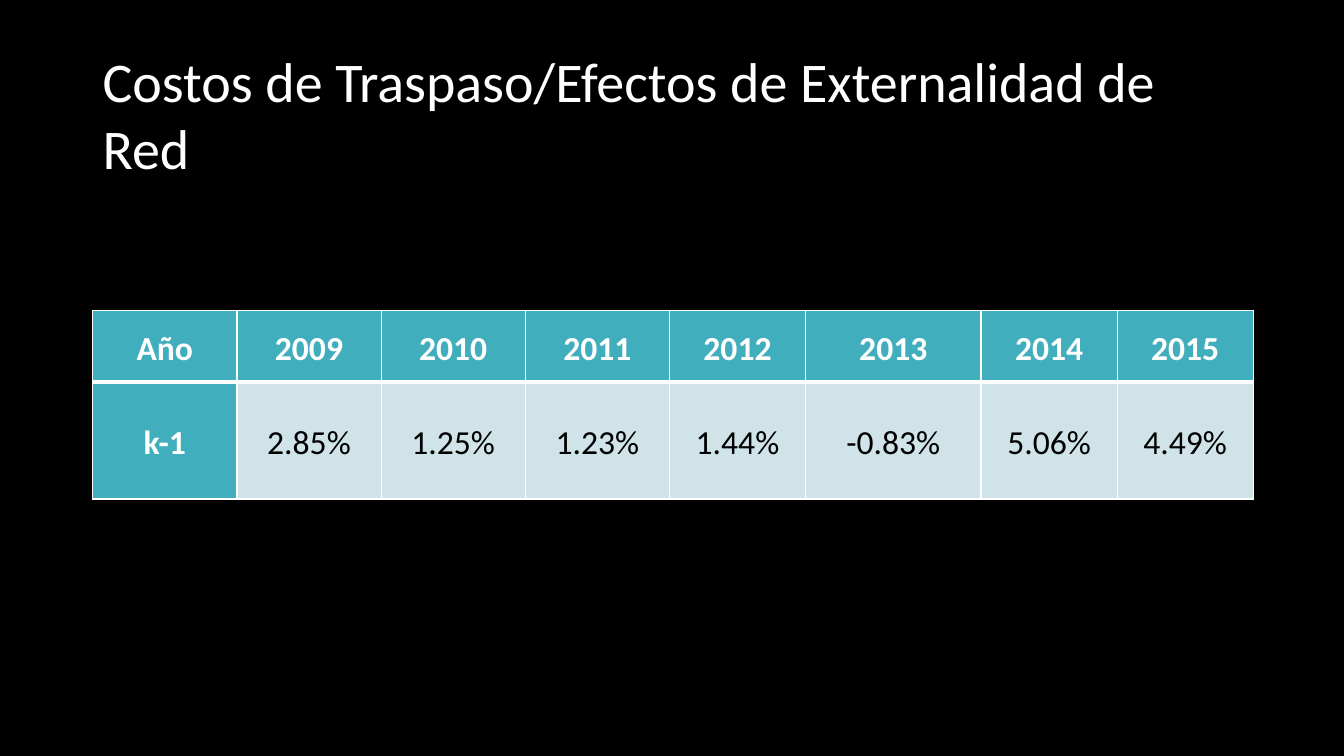
from lxml import etree
from pptx import Presentation
from pptx.dml.color import RGBColor
from pptx.enum import text
from pptx.oxml import ns
from pptx.util import Inches, Pt

WHITE, BLACK, TEAL, PALE = "FFFFFF", "000000", "41AEBD", "CFE3E8"


def style_span(span, size, color, bold=False):
    span.font.name = "Calibri"
    span.font.size = Pt(size)
    span.font.bold = bold
    span.font.color.rgb = RGBColor.from_string(color)


def add_border(cell, side, points):
    """Draw a white line on one side (L, R, T or B) of a cell."""
    line = etree.SubElement(cell._tc.get_or_add_tcPr(), ns.qn(f"a:ln{side}"), w=str(Pt(points)))
    fill = etree.SubElement(line, ns.qn("a:solidFill"))
    etree.SubElement(fill, ns.qn("a:srgbClr"), val=WHITE)


deck = Presentation()
deck.slide_width, deck.slide_height = Inches(13.33), Inches(7.5)
page = deck.slides.add_slide(deck.slide_layouts[6])
page.background.fill.solid()
page.background.fill.fore_color.rgb = RGBColor.from_string(BLACK)

title = page.shapes.add_textbox(Inches(0.92), Inches(0.4), Inches(11.5), Inches(1.45)).text_frame
title.word_wrap = True
title.vertical_anchor = text.MSO_ANCHOR.MIDDLE
title.text = "Costos de Traspaso/Efectos de Externalidad de Red"
style_span(title.paragraphs[0].runs[0], 40, WHITE)

rows = [
    ["Año", "2009", "2010", "2011", "2012", "2013", "2014", "2015"],
    ["k-1", "2.85%", "1.25%", "1.23%", "1.44%", "-0.83%", "5.06%", "4.49%"],
]
widths = [1.43, 1.43, 1.43, 1.43, 1.35, 1.74, 1.35, 1.35]
heights = [0.71, 1.16]
table = page.shapes.add_table(
    len(rows), len(widths), Inches(0.92), Inches(3.08), Inches(11.5), Inches(1.87)
).table
table.first_col = True
table.horz_banding = False
for column, width in zip(table.columns, widths):
    column.width = Inches(width)
for row, height in zip(table.rows, heights):
    row.height = Inches(height)

for r, values in enumerate(rows):
    for c, value in enumerate(values):
        cell = table.cell(r, c)
        heading = r == 0 or c == 0
        cell.margin_left = cell.margin_right = Inches(0.07)
        cell.margin_top = cell.margin_bottom = 0
        cell.vertical_anchor = text.MSO_ANCHOR.MIDDLE
        for side in "LRTB":
            under_header = (r, side) in [(0, "B"), (1, "T")]
            add_border(cell, side, 3 if under_header else 1)
        cell.fill.solid()
        cell.fill.fore_color.rgb = RGBColor.from_string(TEAL if heading else PALE)
        cell.text_frame.text = value
        para = cell.text_frame.paragraphs[0]
        para.alignment = text.PP_ALIGN.CENTER
        para.line_spacing = 1.15
        style_span(para.runs[0], 24, WHITE if heading else BLACK, heading)

deck.save("out.pptx")
